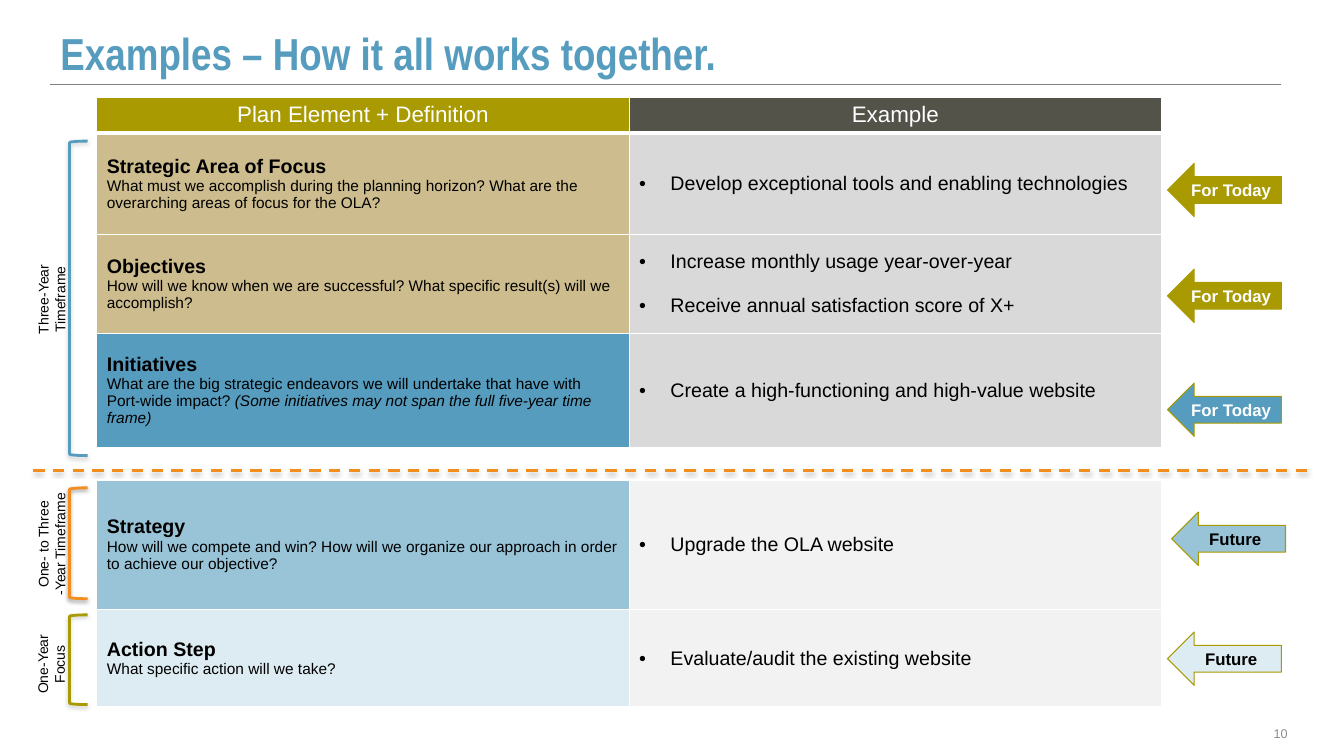
from dataclasses import dataclass

from lxml.etree import SubElement
from pptx import Presentation
from pptx.dml.color import RGBColor
from pptx.enum.dml import MSO_LINE_DASH_STYLE as Dash
from pptx.enum.shapes import MSO_CONNECTOR as Connector, MSO_SHAPE as Shape
from pptx.enum.text import MSO_ANCHOR as Anchor, MSO_AUTO_SIZE as AutoSize, PP_ALIGN as Align
from pptx.oxml.ns import qn
from pptx.util import Inches, Pt


@dataclass(frozen=True)
class Theme:
    font: str = "Arial"
    title_font: str = "Arial Narrow"
    black: str = "000000"
    white: str = "FFFFFF"
    gray: str = "808080"
    number: str = "8C8C8C"
    blue: str = "559CBE"
    mid_blue: str = "99C4D8"
    pale_blue: str = "DDEBF2"
    olive: str = "A89A00"
    orange: str = "F28D1E"
    tan: str = "CDBC8D"
    dark: str = "53534A"
    present: str = "D9D9D9"
    future: str = "F2F2F2"
    title_size: float = 32
    header_size: float = 16
    name_size: float = 14
    definition_size: float = 11
    arrow_size: float = 12
    label_size: float = 10
    number_size: float = 9


THEME = Theme()


def rgb(color):
    return RGBColor.from_string(color)


def write(paragraph, text, size, color=THEME.black, font=THEME.font,
          bold=False, italic=False, align=None):
    if align is not None:
        paragraph.alignment = align
    run = paragraph.add_run()
    run.text = text
    run.font.name = font
    run.font.size = Pt(size)
    run.font.bold = bold
    run.font.italic = italic
    run.font.color.rgb = rgb(color)


def add_bullet(paragraph):
    properties = paragraph._p.get_or_add_pPr()
    properties.set("marL", str(Inches(0.31)))
    properties.set("indent", str(Inches(-0.31)))
    SubElement(properties, qn("a:buFont"), typeface=THEME.font)
    SubElement(properties, qn("a:buChar"), char="•")


def add_shadow(effects, color):
    shadow = SubElement(effects, qn("a:outerShdw"), blurRad=str(Pt(3.1)),
                        dist=str(Pt(1.6)), dir="5400000", rotWithShape="0")
    tint = SubElement(shadow, qn("a:srgbClr"), val=color)
    SubElement(tint, qn("a:alpha"), val="38000")


def add_borders(cell, bottom=1):
    properties = cell._tc.get_or_add_tcPr()
    for side, width in (("L", 1), ("R", 1), ("T", 1), ("B", bottom)):
        border = SubElement(properties, qn(f"a:ln{side}"), w=str(Pt(width)))
        fill = SubElement(border, qn("a:solidFill"))
        SubElement(fill, qn("a:srgbClr"), val=THEME.white)


class PlanSlide:
    def __init__(self, presentation, theme):
        self.theme = theme
        self.slide = presentation.slides.add_slide(presentation.slide_layouts[5])
        self.shapes = self.slide.shapes

    def title(self, text):
        title = self.shapes.title
        title.left, title.top = Inches(0.5), Inches(0.21)
        title.width, title.height = Inches(12.21), Inches(0.63)
        frame = title.text_frame
        frame.auto_size = AutoSize.NONE
        frame.vertical_anchor = Anchor.MIDDLE
        write(frame.paragraphs[0], text, self.theme.title_size, self.theme.blue,
              self.theme.title_font, bold=True, align=Align.LEFT)

    def rule(self, left, right, y, color, width, dash=None, shadow=None):
        line = self.shapes.add_connector(Connector.STRAIGHT, Inches(left), Inches(y),
                                         Inches(right), Inches(y))
        line.line.color.rgb = rgb(color)
        line.line.width = Pt(width)
        if dash is not None:
            line.line.dash_style = dash
        effects = SubElement(line._element.spPr, qn("a:effectLst"))
        if shadow:
            add_shadow(effects, shadow)

    def text(self, text, left, top, width, height, size, color, align, rotation=0):
        box = self.shapes.add_textbox(Inches(left), Inches(top), Inches(width), Inches(height))
        box.rotation = rotation
        box.text_frame.word_wrap = True
        box.text_frame.vertical_anchor = Anchor.MIDDLE
        write(box.text_frame.paragraphs[0], text, size, color, align=align)

    def table(self, top, headers, header_height, elements, example_fill):
        heights = [header_height] + [element[0] for element in elements]
        table = self.shapes.add_table(len(heights), 2, Inches(0.96), Inches(top),
                                      Inches(10.56), Inches(sum(heights))).table
        table.first_row = table.horz_banding = False
        for row, height in zip(table.rows, heights):
            row.height = Inches(height)
        for column in range(2):
            self.header(table.cell(0, column), headers[column] if headers else None)
        for row, (_, fill, name, definition, aside, examples) in enumerate(elements, 1):
            self.definition(table.cell(row, 0), fill, name, definition, aside)
            self.examples(table.cell(row, 1), example_fill, examples)

    def header(self, cell, header):
        add_borders(cell, bottom=3)
        if header is None:
            cell.fill.background()
            return
        text, fill = header
        self.fill_cell(cell, fill)
        write(cell.text_frame.paragraphs[0], text, self.theme.header_size,
              self.theme.white, align=Align.CENTER)

    def definition(self, cell, fill, name, definition, aside):
        add_borders(cell)
        self.fill_cell(cell, fill)
        cell.vertical_anchor = Anchor.MIDDLE
        frame = cell.text_frame
        write(frame.paragraphs[0], name, self.theme.name_size, bold=True)
        meaning = frame.add_paragraph()
        write(meaning, definition, self.theme.definition_size)
        if aside:
            write(meaning, aside, self.theme.definition_size, italic=True)

    def examples(self, cell, fill, examples):
        add_borders(cell)
        self.fill_cell(cell, fill)
        cell.vertical_anchor = Anchor.MIDDLE
        frame = cell.text_frame
        for index, example in enumerate(examples):
            paragraph = frame.add_paragraph() if index else frame.paragraphs[0]
            if index:
                paragraph.space_before = Pt(16)
            add_bullet(paragraph)
            write(paragraph, example, self.theme.name_size)

    def fill_cell(self, cell, color):
        cell.fill.solid()
        cell.fill.fore_color.rgb = rgb(color)

    def bracket(self, top, height, color, shadow):
        bracket = self.shapes.add_shape(Shape.LEFT_BRACKET, Inches(0.69), Inches(top),
                                        Inches(0.18), Inches(height))
        bracket.adjustments[0] = 0.08
        bracket.fill.background()
        bracket.line.color.rgb = rgb(color)
        bracket.line.width = Pt(2)
        bracket.shadow.inherit = False
        add_shadow(bracket._element.spPr.find(qn("a:effectLst")), shadow)

    def arrow(self, text, left, top, fill, color):
        arrow = self.shapes.add_shape(Shape.LEFT_ARROW, Inches(left), Inches(top),
                                      Inches(1.13), Inches(0.53))
        arrow.shadow.inherit = False
        arrow.fill.solid()
        arrow.fill.fore_color.rgb = rgb(fill)
        arrow.line.color.rgb = rgb(self.theme.olive)
        arrow.line.width = Pt(0.75)
        arrow.text_frame.word_wrap = False
        arrow.text_frame.vertical_anchor = Anchor.MIDDLE
        write(arrow.text_frame.paragraphs[0], text, self.theme.arrow_size, color,
              bold=True, align=Align.CENTER)


def main():
    t = THEME
    presentation = Presentation()
    presentation.slide_width, presentation.slide_height = Inches(13.33), Inches(7.5)
    plan = PlanSlide(presentation, t)
    plan.title("Examples – How it all works together.")
    plan.rule(0.5, 12.71, 0.84, t.gray, 0.25)

    future_elements = [
        (1.3, t.mid_blue, "Strategy", "How will we compete and win? How will we organize our "
         "approach in order to achieve our objective?", None, ["Upgrade the OLA website"]),
        (0.96, t.pale_blue, "Action Step", "What specific action will we take?", None,
         ["Evaluate/audit the existing website"]),
    ]
    present_elements = [
        (1.01, t.tan, "Strategic Area of Focus", "What must we accomplish during the planning "
         "horizon? What are the overarching areas of focus for the OLA?", None,
         ["Develop exceptional tools and enabling technologies"]),
        (0.98, t.tan, "Objectives", "How will we know when we are successful? What specific "
         "result(s) will we accomplish?", None,
         ["Increase monthly usage year-over-year", "Receive annual satisfaction score of X+"]),
        (1.13, t.blue, "Initiatives", "What are the big strategic endeavors we will undertake "
         "that have with Port-wide impact?",
         " (Some initiatives may not span the full five-year time frame)",
         ["Create a high-functioning and high-value website"]),
    ]
    plan.table(4.21, None, 0.54, future_elements, t.future)
    plan.table(0.97, [("Plan Element + Definition", t.olive), ("Example", t.dark)], 0.33,
               present_elements, t.present)

    for top, height, color, shadow in [(1.4, 3.12, t.blue, t.gray), (4.84, 1.1, t.orange, t.black),
                                       (6.1, 0.89, t.olive, t.gray)]:
        plan.bracket(top, height, color, shadow)
    for label, left, top, width in [("Three-Year Timeframe", -0.11, 2.75, 1.24),
                                    ("One- to Three -Year Timeframe", -0.14, 5.18, 1.3),
                                    ("One-Year Focus", 0.08, 6.37, 0.85)]:
        plan.text(label, left, top, width, 0.44, t.label_size, t.black, Align.CENTER, 270)

    plan.rule(0.33, 13.01, 4.67, t.orange, 2, Dash.DASH, t.black)
    for text, left, top, fill, color in [("For Today", 11.58, 1.62, t.olive, t.white),
                                         ("For Today", 11.58, 2.67, t.olive, t.white),
                                         ("For Today", 11.58, 3.8, t.blue, t.white),
                                         ("Future", 11.62, 5.08, t.mid_blue, t.black),
                                         ("Future", 11.58, 6.27, t.pale_blue, t.black)]:
        plan.arrow(text, left, top, fill, color)
    plan.text("10", 9.76, 7.08, 3.11, 0.4, t.number_size, t.number, Align.RIGHT)
    presentation.save("out.pptx")


if __name__ == "__main__":
    main()
